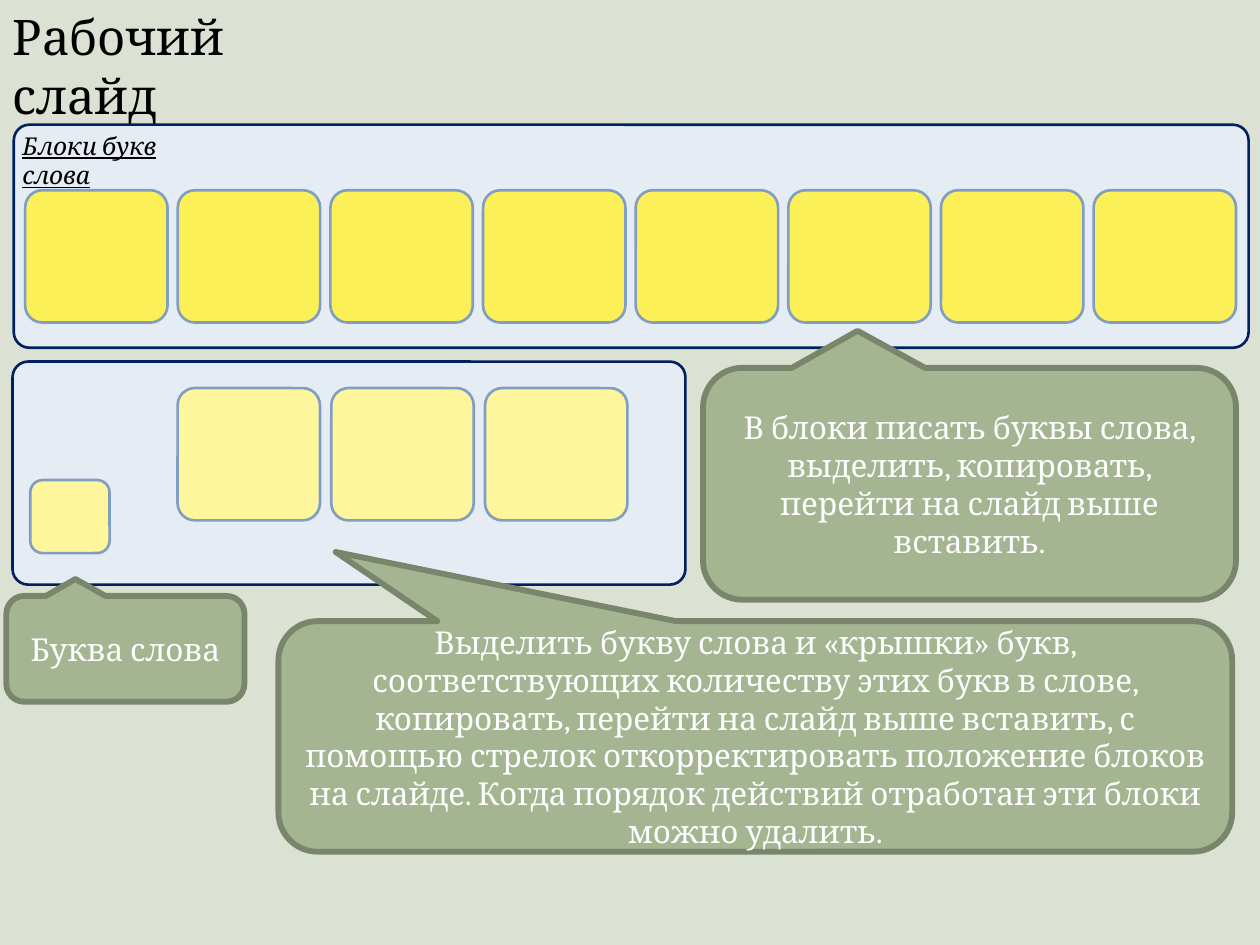
from dataclasses import dataclass

from pptx import Presentation
from pptx.dml.color import RGBColor
from pptx.enum.shapes import MSO_SHAPE
from pptx.enum.text import MSO_ANCHOR, MSO_AUTO_SIZE, PP_ALIGN
from pptx.util import Inches, Pt

ROUNDED = MSO_SHAPE.ROUNDED_RECTANGLE
CALLOUT = MSO_SHAPE.ROUNDED_RECTANGULAR_CALLOUT
TOP, MIDDLE = MSO_ANCHOR.TOP, MSO_ANCHOR.MIDDLE
LEFT, CENTER = PP_ALIGN.LEFT, PP_ALIGN.CENTER
GROW = MSO_AUTO_SIZE.SHAPE_TO_FIT_TEXT
TITLE_ONLY = 5


@dataclass(frozen=True)
class Theme:
    """Colours, font, type sizes and line widths of the slide."""
    background: str = "DBE1D3"
    panel: str = "E6ECF3"
    panel_line: str = "002060"
    letter: str = "FCF059"
    cap: str = "FDF69C"
    block_line: str = "809EC2"
    hint: str = "A5B592"
    hint_line: str = "7A866C"
    dark: str = "000000"
    light: str = "FFFFFF"
    font: str = "Cambria"
    title_size: float = 28
    label_size: float = 14
    hint_size: float = 18
    thin: float = 1.5
    thick: float = 3.35


THEME = Theme()
BLOCK_SIZE = (1.13, 1.05)
HINTS = [
    ((5.58, 2.92, 4.23, 1.84), (-0.21, -0.66, 0.17),
     "В блоки писать буквы слова, выделить, копировать, перейти на слайд выше вставить."),
    ((0.05, 4.73, 1.89, 0.84), (-0.21, -0.66, 0.17), "Буква слова"),
    ((2.21, 4.93, 7.57, 1.83), (-0.44, -0.8, 0.17),
     "Выделить букву слова и «крышки» букв, соответствующих количеству этих букв в слове, "
     "копировать, перейти на слайд выше вставить, с помощью стрелок откорректировать "
     "положение блоков на слайде. Когда порядок действий отработан эти блоки можно удалить."),
]


def write(frame, text, size, color, align=LEFT, anchor=TOP):
    """Write one formatted run into a text frame and return its font."""
    frame.word_wrap = True
    frame.vertical_anchor = anchor
    paragraph = frame.paragraphs[0]
    paragraph.alignment = align
    run = paragraph.add_run()
    run.text = text
    run.font.name = THEME.font
    run.font.size = Pt(size)
    run.font.color.rgb = RGBColor.from_string(color)
    return run.font


def add_outlined(slide, kind, box, adjustments, fill, line, width):
    """Add a flat filled shape with an outline."""
    shape = slide.shapes.add_shape(kind, *map(Inches, box))
    shape.shadow.inherit = False
    for index, value in enumerate(adjustments):
        shape.adjustments[index] = value
    shape.fill.solid()
    shape.fill.fore_color.rgb = RGBColor.from_string(fill)
    shape.line.color.rgb = RGBColor.from_string(line)
    shape.line.width = Pt(width)
    return shape


def add_title(slide, text):
    """Place the slide title in the top left corner."""
    title = slide.shapes.title
    title.left, title.top, title.width, title.height = map(Inches, (0, 0, 2.82, 0.57))
    title.text_frame.auto_size = GROW
    write(title.text_frame, text, THEME.title_size, THEME.dark)


def add_panel(slide, box):
    """Add a pale panel that holds blocks."""
    add_outlined(slide, ROUNDED, box, [0.07], THEME.panel, THEME.panel_line, THEME.thin)


def add_label(slide, box, text):
    """Add an underlined italic panel label."""
    label = slide.shapes.add_textbox(*map(Inches, box))
    label.text_frame.auto_size = GROW
    font = write(label.text_frame, text, THEME.label_size, THEME.dark)
    font.italic = True
    font.underline = True


def add_block(slide, box, fill, rounding=0.13):
    """Add one empty letter block."""
    add_outlined(slide, ROUNDED, box, [rounding], fill, THEME.block_line, THEME.thin)


def add_block_row(slide, count, left, top, pitch, fill):
    """Add a row of equally spaced letter blocks."""
    for column in range(count):
        add_block(slide, (left + column * pitch, top, *BLOCK_SIZE), fill)


def add_hint(slide, box, pointer, text):
    """Add a speech callout with an instruction."""
    hint = add_outlined(slide, CALLOUT, box, pointer, THEME.hint, THEME.hint_line, THEME.thick)
    write(hint.text_frame, text, THEME.hint_size, THEME.light, CENTER, MIDDLE)


def main():
    """Build the slide and save it."""
    deck = Presentation()
    deck.slide_width, deck.slide_height = Inches(10), Inches(7.5)
    slide = deck.slides.add_slide(deck.slide_layouts[TITLE_ONLY])
    slide.background.fill.solid()
    slide.background.fill.fore_color.rgb = RGBColor.from_string(THEME.background)

    add_title(slide, "Рабочий слайд")
    add_panel(slide, (0.11, 0.99, 9.8, 1.77))
    add_label(slide, (0.08, 0.99, 1.69, 0.34), "Блоки букв слова")
    add_panel(slide, (0.1, 2.87, 5.34, 1.77))
    add_block_row(slide, 8, 0.2, 1.51, 8.48 / 7, THEME.letter)
    add_block_row(slide, 3, 1.41, 3.08, 1.22, THEME.cap)
    add_block(slide, (0.24, 3.81, 0.63, 0.58), THEME.cap, 0.17)
    for box, pointer, text in HINTS:
        add_hint(slide, box, pointer, text)

    deck.save("out.pptx")


if __name__ == "__main__":
    main()
